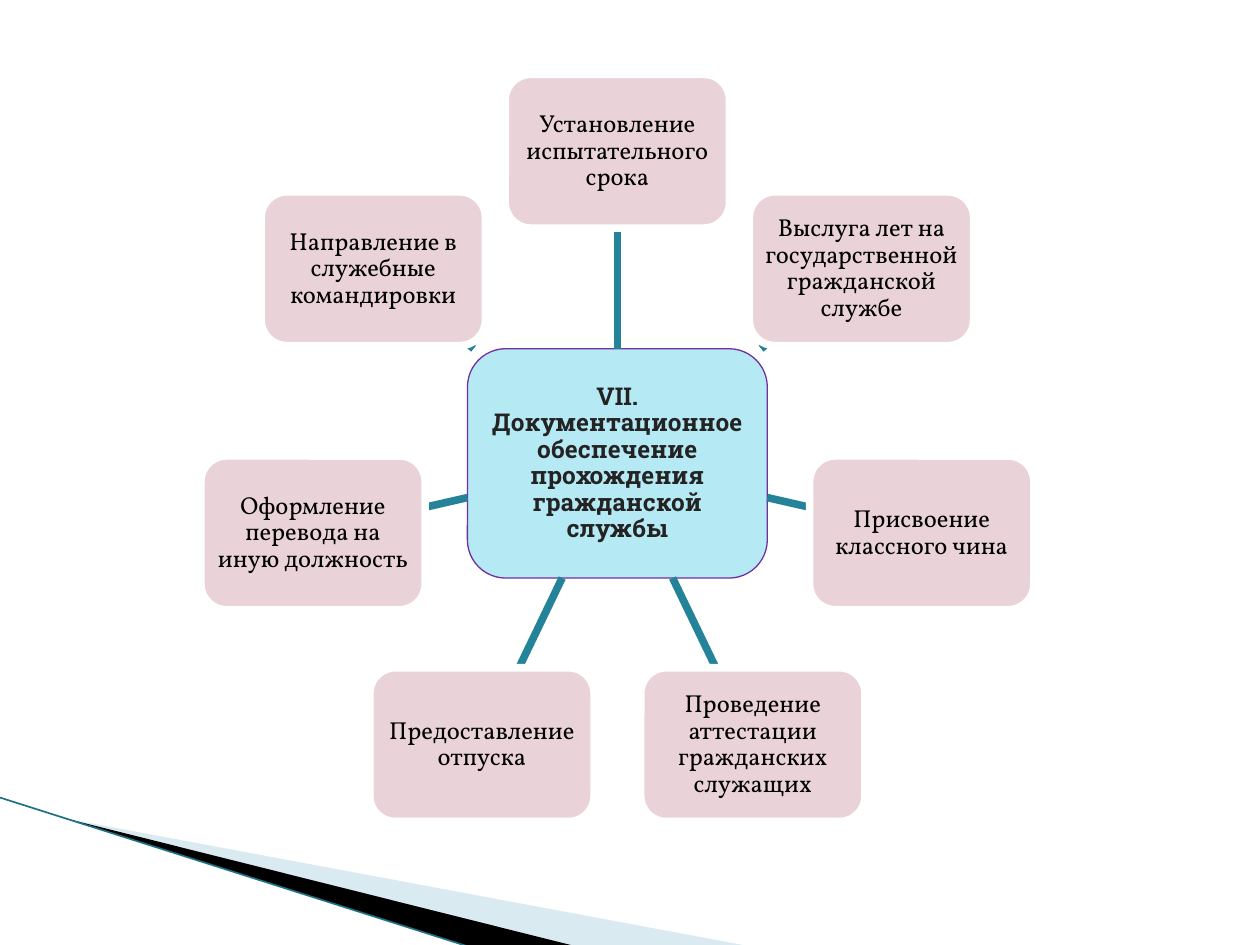
import math

import lxml.etree
import pptx
import pptx.dml.color
import pptx.enum.shapes
import pptx.enum.text
import pptx.oxml.ns
import pptx.util

Inches = pptx.util.Inches
RGBColor = pptx.dml.color.RGBColor

WHITE = RGBColor(0xFF, 0xFF, 0xFF)
BLACK = RGBColor(0x00, 0x00, 0x00)
INK = RGBColor(0x23, 0x23, 0x23)
AQUA = RGBColor(0xB5, 0xE9, 0xF4)
PURPLE = RGBColor(0x70, 0x30, 0xA0)
ROSE = RGBColor(0xEA, 0xD3, 0xD8)
TEAL = RGBColor(0x24, 0x82, 0x99)
DARK_TEAL = RGBColor(0x1D, 0x71, 0x86)
PALE_BLUE = RGBColor(0xA0, 0xCB, 0xDC)

SPOKE_WIDTH = 4.33
HUB_TEXT = "VII. Документационное обеспечение прохождения гражданской службы"
TOPICS = [
    "Установление испытательного срока",
    "Выслуга лет на государственной гражданской службе",
    "Присвоение классного чина",
    "Проведение аттестации гражданских служащих",
    "Предоставление отпуска",
    "Оформление перевода на иную должность",
    "Направление в служебные командировки",
]
HUB_STYLE = {"fill": AQUA, "line": PURPLE, "width": 0.75,
             "font": {"name": "Roboto Slab", "bold": True, "color": INK}}
TOPIC_STYLE = {"fill": ROSE, "line": WHITE, "width": SPOKE_WIDTH,
               "font": {"name": "Vollkorn", "bold": False, "color": BLACK}}
FRAME_FORMAT = {
    "word_wrap": True,
    "vertical_anchor": pptx.enum.text.MSO_ANCHOR.MIDDLE,
    **{f"margin_{side}": Inches(0.04) for side in ("left", "top", "right", "bottom")},
}
PARAGRAPH_FORMAT = {"alignment": pptx.enum.text.PP_ALIGN.CENTER, "line_spacing": 0.9}


def set_attributes(target, values):
    """Set each named attribute of the target."""
    for name, value in values.items():
        setattr(target, name, value)


def add_card(slide, center, size, text, style):
    """Add a rounded box with centred text around a centre point."""
    (x, y), (width, height) = center, size
    shape = slide.shapes.add_shape(
        pptx.enum.shapes.MSO_SHAPE.ROUNDED_RECTANGLE,
        Inches(x - width / 2), Inches(y - height / 2), Inches(width), Inches(height))
    shape.shadow.inherit = False
    shape.fill.solid()
    shape.fill.fore_color.rgb = style["fill"]
    shape.line.color.rgb = style["line"]
    shape.line.width = pptx.util.Pt(style["width"])
    set_attributes(shape.text_frame, FRAME_FORMAT)
    paragraph = shape.text_frame.paragraphs[0]
    set_attributes(paragraph, PARAGRAPH_FORMAT)
    run = paragraph.add_run()
    run.text = text
    font = style["font"]
    set_attributes(run.font, {"name": font["name"], "bold": font["bold"],
                              "size": pptx.util.Pt(14)})
    run.font.color.rgb = font["color"]
    return shape


def add_line(slide, start, end, color, width):
    """Add a straight connector without a shadow."""
    connector = slide.shapes.add_connector(
        pptx.enum.shapes.MSO_CONNECTOR.STRAIGHT,
        *(Inches(value) for value in (*start, *end)))
    connector.line.color.rgb = color
    connector.line.width = pptx.util.Pt(width)
    properties = connector._element.spPr
    lxml.etree.SubElement(properties, pptx.oxml.ns.qn("a:effectLst"))
    return connector


def add_wedge(slide, points, color, opacity=100):
    """Add a filled polygon without an outline."""
    corners = [(Inches(x), Inches(y)) for x, y in points]
    builder = slide.shapes.build_freeform(*corners[0])
    builder.add_line_segments(corners[1:], close=True)
    shape = builder.convert_to_shape()
    shape.shadow.inherit = False
    shape.line.fill.background()
    shape.fill.solid()
    shape.fill.fore_color.rgb = color
    if opacity < 100:
        tint = shape._element.spPr.find(".//" + pptx.oxml.ns.qn("a:srgbClr"))
        alpha = lxml.etree.SubElement(tint, pptx.oxml.ns.qn("a:alpha"))
        alpha.set("val", str(opacity * 1000))


def add_corner_decoration(slide, left, top, width, height):
    """Draw the pale wedge, the black wedge and the edge line in the corner box."""
    right, bottom = left + width, top + height
    tip = (left + 0.54, top + 0.17)
    add_wedge(slide, [tip, (right, bottom), (right - 1.39, bottom)], PALE_BLUE, 40)
    add_wedge(slide, [tip, (right - 1.38, bottom), (right - 2.23, bottom)], BLACK)
    add_line(slide, (left, top), (right - 2.24, bottom), DARK_TEAL, 0.95)


def reach(direction, size):
    """Return the distance from a box's centre to its edge along a direction."""
    return 1 / max(abs(part) * 2 / side for part, side in zip(direction, size))


def add_radial_diagram(slide, left, top, width, height):
    """Place the hub and an evenly spaced ring of topics in the box."""
    hub_size, topic_size = (2.38, 1.82), (1.78, 1.22)
    count = len(TOPICS)
    radius = (height - topic_size[1]) / (1 + math.cos(math.pi / count))
    center = (left + width / 2, top + topic_size[1] / 2 + radius)
    hub = add_card(slide, center, hub_size, HUB_TEXT, HUB_STYLE)
    for index, text in enumerate(TOPICS):
        angle = 2 * math.pi * index / count
        direction = (math.sin(angle), -math.cos(angle))

        def point_at(distance):
            return [c + distance * d for c, d in zip(center, direction)]

        spoke = add_line(slide, point_at(reach(direction, hub_size)),
                         point_at(radius - reach(direction, topic_size)),
                         TEAL, SPOKE_WIDTH)
        topic = add_card(slide, point_at(radius), topic_size, text, TOPIC_STYLE)
        if index == 0:
            spoke.begin_connect(hub, 0)
            spoke.end_connect(topic, 2)


def main():
    """Build the slide and save it."""
    presentation = pptx.Presentation()
    presentation.slide_width = Inches(10)
    presentation.slide_height = Inches(7.5)
    slide = presentation.slides.add_slide(presentation.slide_layouts[6])
    add_corner_decoration(slide, 0, 6.33, 5.95, 1.18)
    add_radial_diagram(slide, 1.59, 0.59, 6.62, 5.93)
    presentation.save("out.pptx")


if __name__ == "__main__":
    main()
